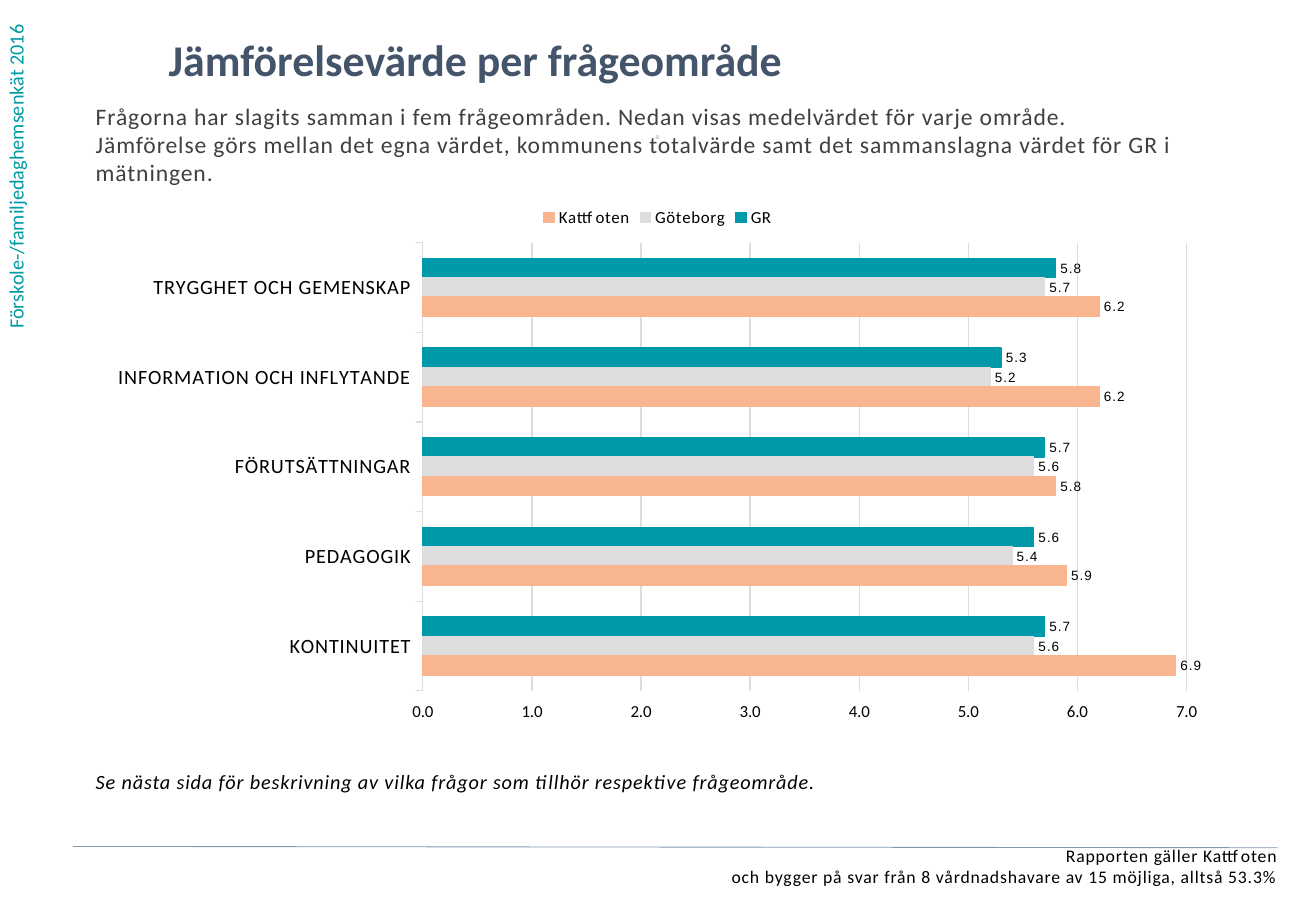
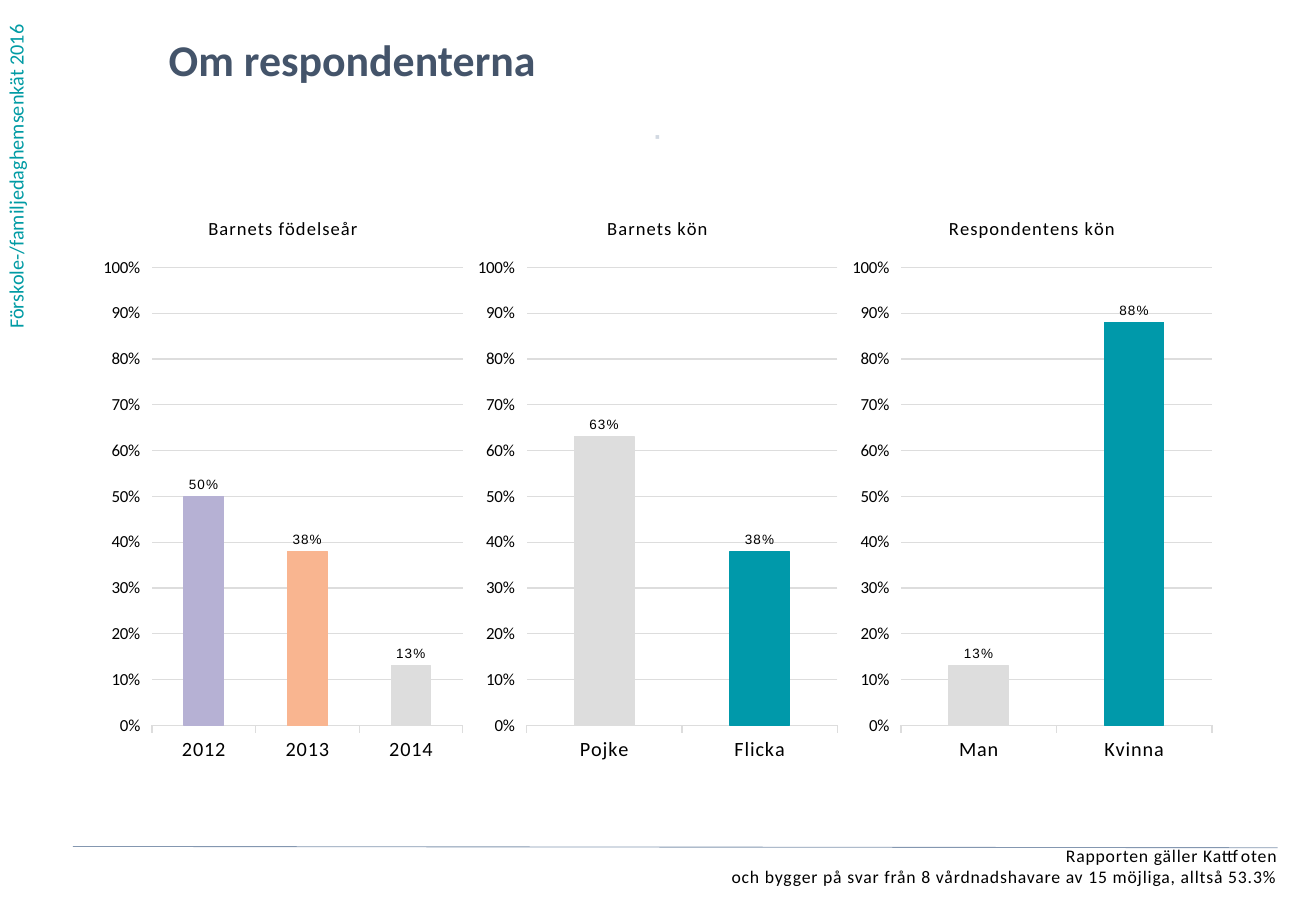
from dataclasses import dataclass

from pptx import Presentation
from pptx.chart.data import CategoryChartData
from pptx.dml.color import RGBColor
from pptx.enum.chart import (XL_CHART_TYPE, XL_LABEL_POSITION, XL_LEGEND_POSITION,
                             XL_TICK_LABEL_POSITION, XL_TICK_MARK)
from pptx.enum.shapes import MSO_CONNECTOR
from pptx.enum.text import MSO_ANCHOR, MSO_AUTO_SIZE, PP_ALIGN
from pptx.oxml.ns import qn
from pptx.oxml.xmlchemy import OxmlElement
from pptx.util import Pt


@dataclass(frozen=True)
class Theme:
    font: str = "Calibri"
    label_font: str = "Arial"
    # Colours
    heading: str = "44546A"
    intro: str = "404040"
    ink: str = "000000"
    survey: str = "009BA4"
    rule: str = "8497B0"
    dot: str = "D2D9E2"
    teal: str = "0099AA"
    grey: str = "DDDDDD"
    peach: str = "F9B590"
    lilac: str = "B6B1D4"
    # Type sizes
    title_size: float = 26
    intro_size: float = 14
    note_size: float = 12
    footer_size: float = 10.5
    chart_title_size: float = 11
    category_size: float = 12
    chart_size: float = 10
    label_size: float = 8
    # Letter spacing, in hundredths of a point
    tracking: int = 50


THEME = Theme()
TITLE_BOX = (100, 19.5, 600, 41)
INTRO_BOX = (56.75, 60.25, 681, 54)
SURVEY_BOX = (-1.5, 0, 29, 202)
FOOTER_BOX = (8.5, 500.75, 748.5, 31)
DOT_BOX = (278.75, 73.5, 222, 28)
NOTE_BOX = (56.75, 456, 666, 20)
CHART_LEFT, CHART_TOP, CHART_WIDTH = 56.75, 115.25, 666
AREA_CHART_HEIGHT, RESPONDENT_CHART_HEIGHT = 319, 343


def rgb(colour):
    return RGBColor.from_string(colour)


def style_font(font, size, colour=THEME.ink, name=THEME.font, bold=False, italic=False):
    font.name, font.size = name, Pt(size)
    font.bold, font.italic = bold, italic
    font.color.rgb = rgb(colour)


def write(shape, lines, size, colour=THEME.ink, align=PP_ALIGN.LEFT,
          tracking=0, bold=False, italic=False):
    frame = shape.text_frame
    frame.word_wrap = True
    frame.auto_size = MSO_AUTO_SIZE.NONE
    frame.vertical_anchor = MSO_ANCHOR.TOP
    frame.margin_left = frame.margin_top = frame.margin_right = frame.margin_bottom = 0
    for index, line in enumerate(lines):
        paragraph = frame.add_paragraph() if index else frame.paragraphs[0]
        paragraph.alignment = align
        paragraph.space_before = Pt(0)
        run = paragraph.add_run()
        run.text = line
        style_font(run.font, size, colour, bold=bold, italic=italic)
        run.font._element.set("spc", str(tracking))
    return frame


def add_text(slide, box, lines, size, **style):
    return write(slide.shapes.add_textbox(*map(Pt, box)), lines, size, **style)


def place(placeholder, box):
    placeholder.left, placeholder.top, placeholder.width, placeholder.height = map(Pt, box)


def add_framed_slide(prs, layout, title):
    """Slide with title, survey name, dot, rule and footer."""
    slide = prs.slides.add_slide(prs.slide_layouts[layout])
    place(slide.shapes.title, TITLE_BOX)
    write(slide.shapes.title, [title], THEME.title_size, colour=THEME.heading, bold=True)

    # Survey name up the left edge
    survey = add_text(slide, SURVEY_BOX, ["Förskole-/familjedaghemsenkät 2016"],
                      THEME.note_size, colour=THEME.survey)
    survey.margin_left = survey.margin_right = Pt(7.2)
    survey.margin_top = survey.margin_bottom = Pt(3.6)
    survey._txBody.bodyPr.set("vert", "vert270")

    add_text(slide, DOT_BOX, ["⋅"], THEME.note_size, colour=THEME.dot,
             align=PP_ALIGN.CENTER, tracking=THEME.tracking, bold=True)

    # Footer under its rule
    add_text(slide, FOOTER_BOX,
             ["Rapporten gäller Kattfoten",
              "och bygger på svar från 8 vårdnadshavare av 15 möjliga, alltså 53.3%"],
             THEME.footer_size, align=PP_ALIGN.RIGHT, tracking=THEME.tracking)
    rule = slide.shapes.add_connector(MSO_CONNECTOR.STRAIGHT,
                                      Pt(43.25), Pt(501.75), Pt(757.25), Pt(502.5))
    rule.line.color.rgb = rgb(THEME.rule)
    rule.line.width = Pt(0.5)
    rule._element.spPr.append(OxmlElement("a:effectLst"))
    return slide


def add_intro(slide, lines):
    intro = slide.placeholders[1]
    place(intro, INTRO_BOX)
    frame = write(intro, lines, THEME.intro_size, colour=THEME.intro,
                  tracking=THEME.tracking)
    for paragraph in frame.paragraphs:
        properties = paragraph._p.get_or_add_pPr()
        properties.set("marL", "0")
        properties.set("indent", "0")
        properties.append(OxmlElement("a:buNone"))


def paint(part, colour):
    part.format.fill.solid()
    part.format.fill.fore_color.rgb = rgb(colour)
    draw_line(part.format.line, colour)


def draw_line(line, colour=THEME.grey):
    line.color.rgb = rgb(colour)
    line.width = Pt(0.75)


def add_bars(slide, kind, box, categories, series, top, step, number_format):
    """Chart with reversed categories; series is a list of (name, values, colour)."""
    data = CategoryChartData()
    data.categories = categories
    for name, values, _ in series:
        data.add_series(name, values)
    chart = slide.shapes.add_chart(kind, *map(Pt, box), data).chart
    style_font(chart.font, THEME.chart_size)
    chart.has_legend = chart.has_title = False

    # Axes: reversed categories, with the scale kept at the bottom or left
    category_axis, value_axis = chart.category_axis, chart.value_axis
    category_axis.reverse_order = True
    category_axis.major_tick_mark = XL_TICK_MARK.OUTSIDE
    style_font(category_axis.tick_labels.font, THEME.category_size)
    draw_line(category_axis.format.line)
    value_axis.minimum_scale, value_axis.maximum_scale = 0, top
    value_axis.major_unit = step
    value_axis.major_tick_mark = XL_TICK_MARK.OUTSIDE
    value_axis.tick_label_position = XL_TICK_LABEL_POSITION.HIGH
    value_axis.tick_labels.number_format = number_format
    value_axis.tick_labels.number_format_is_linked = False
    style_font(value_axis.tick_labels.font, THEME.chart_size)
    value_axis.format.line.fill.background()
    draw_line(value_axis.major_gridlines.format.line)

    # Bars and their values
    plot = chart.plots[0]
    plot.gap_width = 162
    plot.vary_by_categories = False
    for bars, (_, _, colour) in zip(plot.series, series):
        paint(bars, colour)
        bars.invert_if_negative = False
        labels = bars.data_labels
        labels.show_value = True
        labels.position = XL_LABEL_POSITION.OUTSIDE_END
        labels.number_format = number_format
        labels.number_format_is_linked = False
        style_font(labels.font, THEME.label_size, name=THEME.label_font)
    return chart


def track_chart(chart):
    """Space out the letters of all chart text except the value axis."""
    for tag in ("a:defRPr", "a:rPr"):
        for properties in chart.element.iter(qn(tag)):
            properties.set("spc", str(THEME.tracking))
    chart.value_axis.tick_labels.font._element.set("spc", "0")


def add_area_chart(slide):
    chart = add_bars(
        slide, XL_CHART_TYPE.BAR_CLUSTERED,
        (CHART_LEFT, CHART_TOP, CHART_WIDTH, AREA_CHART_HEIGHT),
        ["TRYGGHET OCH GEMENSKAP", "INFORMATION OCH INFLYTANDE",
         "FÖRUTSÄTTNINGAR", "PEDAGOGIK", "KONTINUITET"],
        [("GR", (5.8, 5.3, 5.7, 5.6, 5.7), THEME.teal),
         ("Göteborg", (5.7, 5.2, 5.6, 5.4, 5.6), THEME.grey),
         ("Kattfoten", (6.2, 6.2, 5.8, 5.9, 6.9), THEME.peach)],
        top=7, step=1, number_format="0.0;0.0")
    chart.has_legend = True
    chart.legend.position = XL_LEGEND_POSITION.TOP
    chart.legend.include_in_layout = False
    style_font(chart.legend.font, THEME.chart_size)
    track_chart(chart)


def add_respondent_chart(slide, left, width, title, answers):
    """Column chart; answers is a list of (category, share, colour)."""
    categories, shares, colours = zip(*answers)
    chart = add_bars(slide, XL_CHART_TYPE.COLUMN_CLUSTERED,
                     (left, CHART_TOP, width, RESPONDENT_CHART_HEIGHT),
                     categories, [("Series 1", shares, THEME.teal)],
                     top=1, step=0.1, number_format="0%;0%")
    chart.has_title = True
    chart.chart_title.include_in_layout = False
    heading = chart.chart_title.text_frame.paragraphs[0].add_run()
    heading.text = title
    style_font(heading.font, THEME.chart_title_size)
    for index, colour in enumerate(colours):
        paint(chart.plots[0].series[0].points[index], colour)
    track_chart(chart)


def main():
    prs = Presentation()
    prs.slide_width, prs.slide_height = Pt(780), Pt(540)

    # Comparison by question area
    areas = add_framed_slide(prs, 1, "Jämförelsevärde per frågeområde")
    add_intro(areas, [
        "Frågorna har slagits samman i fem frågeområden. Nedan visas medelvärdet "
        "för varje område.",
        "Jämförelse görs mellan det egna värdet, kommunens totalvärde samt det "
        "sammanslagna värdet för GR i mätningen."])
    add_area_chart(areas)
    add_text(areas, NOTE_BOX,
             ["Se nästa sida för beskrivning av vilka frågor som tillhör "
              "respektive frågeområde."],
             THEME.note_size, tracking=THEME.tracking, italic=True)

    # About the respondents
    respondents = add_framed_slide(prs, 5, "Om respondenterna")
    questions = [
        ("Barnets födelseår", [("2014", 0.13, THEME.grey), ("2013", 0.38, THEME.peach),
                               ("2012", 0.5, THEME.lilac)]),
        ("Barnets kön", [("Flicka", 0.38, THEME.teal), ("Pojke", 0.63, THEME.grey)]),
        ("Respondentens kön", [("Kvinna", 0.88, THEME.teal), ("Man", 0.13, THEME.grey)]),
    ]
    width = CHART_WIDTH / len(questions)
    for column, (title, answers) in enumerate(questions):
        add_respondent_chart(respondents, CHART_LEFT + column * width, width,
                             title, answers)

    prs.save("out.pptx")


if __name__ == "__main__":
    main()
